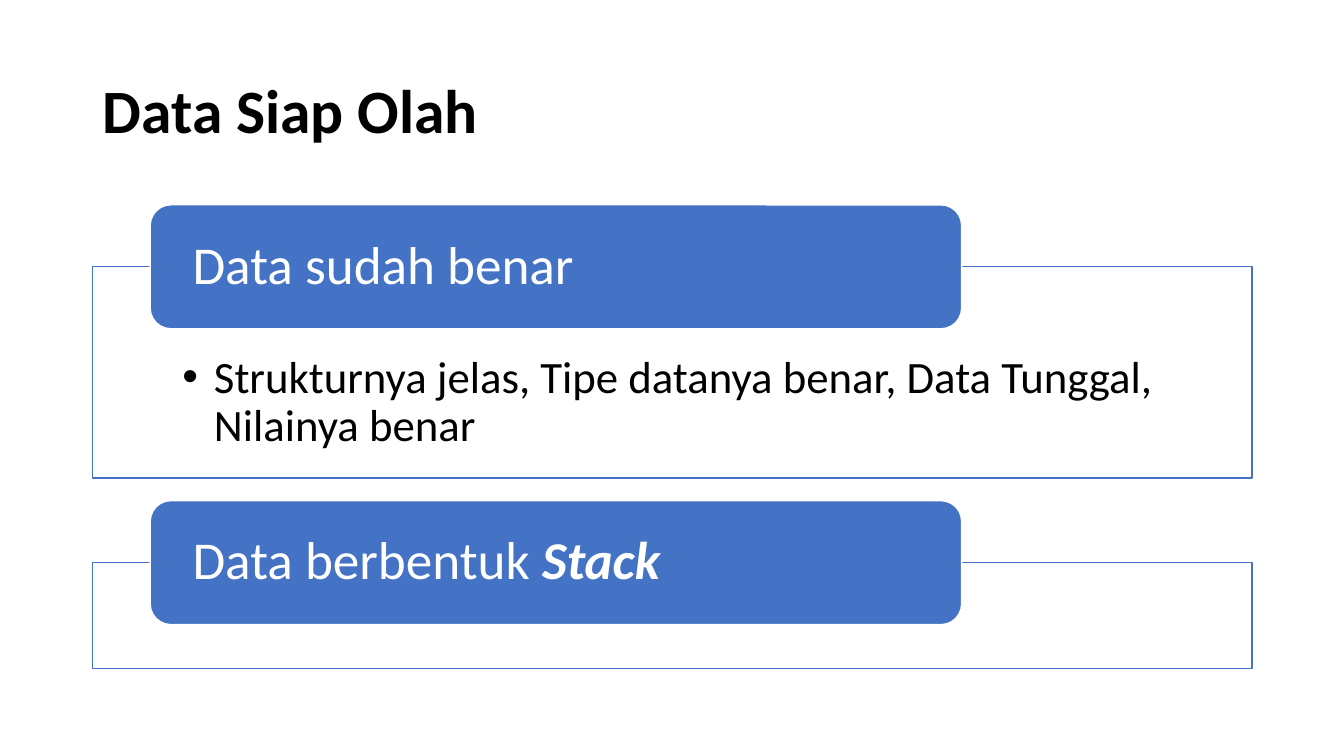
"""Build the "Data Siap Olah" slide with two headed frames."""
import pptx
import pptx.dml.color
import pptx.enum.shapes
import pptx.enum.text
import pptx.oxml.ns
import pptx.util
from lxml import etree

Pt = pptx.util.Pt
qn = pptx.oxml.ns.qn
SHAPES = pptx.enum.shapes.MSO_SHAPE
ANCHOR = pptx.enum.text.MSO_ANCHOR

COLORS = {"blue": "4472C4", "white": "FFFFFF", "black": "000000"}
FRAME_LEFT, FRAME_WIDTH = 66.24, 828
HEADING_LEFT, HEADING_WIDTH, HEADING_HEIGHT = 107.28, 579.6, 88.56


def rgb(color):
    return pptx.dml.color.RGBColor.from_string(COLORS[color])


def add_block(slide, preset, box, fill, line):
    block = slide.shapes.add_shape(preset, *map(Pt, box))
    block.shadow.inherit = False
    block.fill.solid()
    block.fill.fore_color.rgb = rgb(fill)
    block.line.color.rgb = rgb(line)
    block.line.width = Pt(1)
    return block


def write_text(holder, runs, size, color, insets, anchor, bullet_indent=0):
    """Fill a shape with one paragraph made of (text, bold, italic) runs."""
    frame = holder.text_frame
    frame.word_wrap = True
    frame.vertical_anchor = anchor
    frame.margin_left, frame.margin_top, frame.margin_right, frame.margin_bottom = map(Pt, insets)
    paragraph = frame.paragraphs[0]
    paragraph.alignment = pptx.enum.text.PP_ALIGN.LEFT
    paragraph.line_spacing = 0.9
    if bullet_indent:
        properties = paragraph._p.get_or_add_pPr()
        properties.set("marL", str(Pt(bullet_indent)))
        properties.set("indent", str(-Pt(bullet_indent)))
        etree.SubElement(properties, qn("a:buFont"), typeface="Arial")
        etree.SubElement(properties, qn("a:buChar"), char="•")
    for text, bold, italic in runs:
        run = paragraph.add_run()
        run.text = text
        run.font.name = "Calibri"
        run.font.size = Pt(size)
        run.font.bold = bold
        run.font.italic = italic
        run.font.color.rgb = rgb(color)


def add_title(slide, text):
    title = slide.shapes.add_textbox(*map(Pt, (FRAME_LEFT, 28.8, FRAME_WIDTH, 104.4)))
    write_text(title, [(text, True, False)], 44, "black", (7.2, 3.6, 7.2, 3.6), ANCHOR.MIDDLE)


def add_section(slide, top, height, heading_runs, detail=None):
    """Draw a frame with its heading centred on the frame's top edge."""
    frame = add_block(slide, SHAPES.RECTANGLE, (FRAME_LEFT, top, FRAME_WIDTH, height), "white", "blue")
    frame_color = frame._element.spPr.find(qn("a:solidFill")).find(qn("a:srgbClr"))
    etree.SubElement(frame_color, qn("a:alpha"), val="90000")
    if detail:
        write_text(frame, [(detail, False, False)], 32, "black",
                   (64.08, 62.64, 64.08, 18), ANCHOR.TOP, bullet_indent=22.5)
    heading_box = (HEADING_LEFT, top - HEADING_HEIGHT / 2, HEADING_WIDTH, HEADING_HEIGHT)
    heading = add_block(slide, SHAPES.ROUNDED_RECTANGLE, heading_box, "blue", "white")
    write_text(heading, heading_runs, 38, "white", (25.92, 0, 25.92, 0), ANCHOR.MIDDLE)


def main():
    deck = pptx.Presentation()
    deck.slide_width, deck.slide_height = Pt(960), Pt(540)
    slide = deck.slides.add_slide(deck.slide_layouts[6])
    add_title(slide, "Data Siap Olah")
    add_section(slide, 190.6, 150.8, [("Data sudah benar", False, False)],
                "Strukturnya jelas, Tipe datanya benar, Data Tunggal, Nilainya benar")
    add_section(slide, 401.9, 75.6, [("Data berbentuk ", False, False), ("Stack", True, True)])
    deck.save("out.pptx")


if __name__ == "__main__":
    main()
